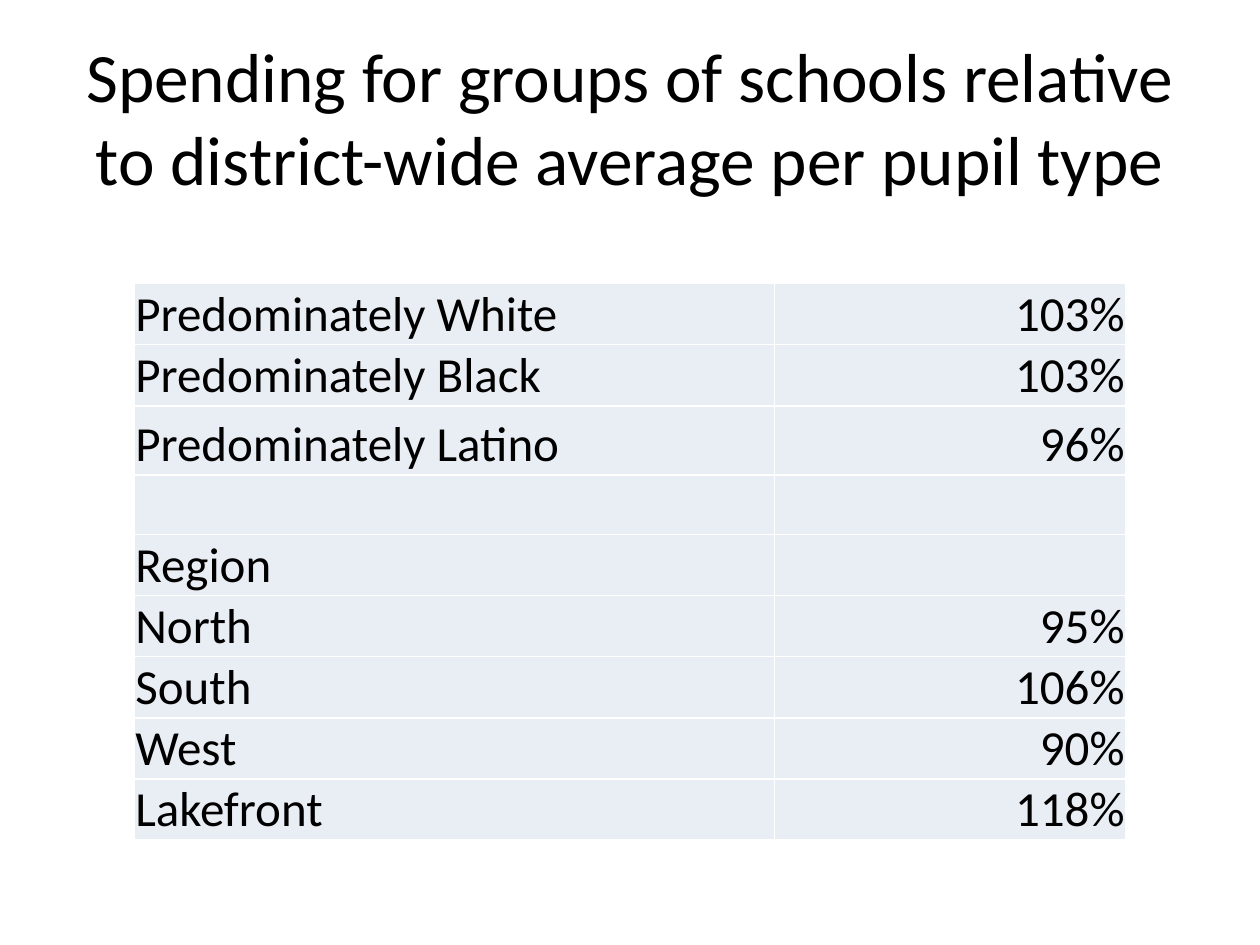
from pptx import Presentation, util as u
from pptx.dml.color import RGBColor
from pptx.enum import text

BLACK = RGBColor(0x00, 0x00, 0x00)
PALE_BLUE = RGBColor(0xE9, 0xED, 0xF4)
FONT = "Calibri"

SPENDING = [
    ("Predominately White", "103%"),
    ("Predominately Black", "103%"),
    ("Predominately Latino", "96%"),
    ("", ""),
    ("Region", ""),
    ("North", "95%"),
    ("South", "106%"),
    ("West", "90%"),
    ("Lakefront", "118%"),
]
COLUMN_WIDTHS = [u.Inches(5.08), u.Inches(2.79)]
ROW_HEIGHT = u.Inches(0.47)
LATINO_ROW, LATINO_HEIGHT = 2, u.Inches(0.55)
ALIGNMENTS = [text.PP_ALIGN.LEFT, text.PP_ALIGN.RIGHT]


def format_paragraph(paragraph, size, alignment):
    paragraph.alignment = alignment
    paragraph.font.name = FONT
    paragraph.font.size = u.Pt(size)
    paragraph.font.color.rgb = BLACK


presentation = Presentation()
presentation.slide_width = u.Inches(10)
presentation.slide_height = u.Inches(7.5)
slide = presentation.slides.add_slide(presentation.slide_layouts[5])

# Title
title = slide.shapes.title
title.left, title.top = u.Inches(0.5), u.Inches(0.3)
title.width, title.height = u.Inches(9), u.Inches(1.25)
title.text_frame.text = (
    "Spending for groups of schools relative to district-wide average per pupil type"
)
title.text_frame.word_wrap = True
title.text_frame.auto_size = text.MSO_AUTO_SIZE.NONE
title.text_frame.vertical_anchor = text.MSO_ANCHOR.MIDDLE
format_paragraph(title.text_frame.paragraphs[0], 39.6, text.PP_ALIGN.CENTER)

# Table, centred across the slide
table_width = sum(COLUMN_WIDTHS)
table = slide.shapes.add_table(
    len(SPENDING), len(COLUMN_WIDTHS),
    (presentation.slide_width - table_width) // 2, u.Inches(2.25),
    table_width, ROW_HEIGHT * len(SPENDING),
).table
table.first_row = False
table.horz_banding = False
for column, width in zip(table.columns, COLUMN_WIDTHS):
    column.width = width
for row in table.rows:
    row.height = ROW_HEIGHT
table.rows[LATINO_ROW].height = LATINO_HEIGHT

# Cells: labels on the left, percentages on the right
for row, values in zip(table.rows, SPENDING):
    for cell, value, alignment in zip(row.cells, values, ALIGNMENTS):
        cell.fill.solid()
        cell.fill.fore_color.rgb = PALE_BLUE
        if not value:
            continue
        cell.text = value
        cell.vertical_anchor = text.MSO_ANCHOR.BOTTOM
        cell.margin_left = cell.margin_right = cell.margin_top = u.Inches(0.01)
        cell.margin_bottom = 0
        format_paragraph(cell.text_frame.paragraphs[0], 28, alignment)

presentation.save("out.pptx")
